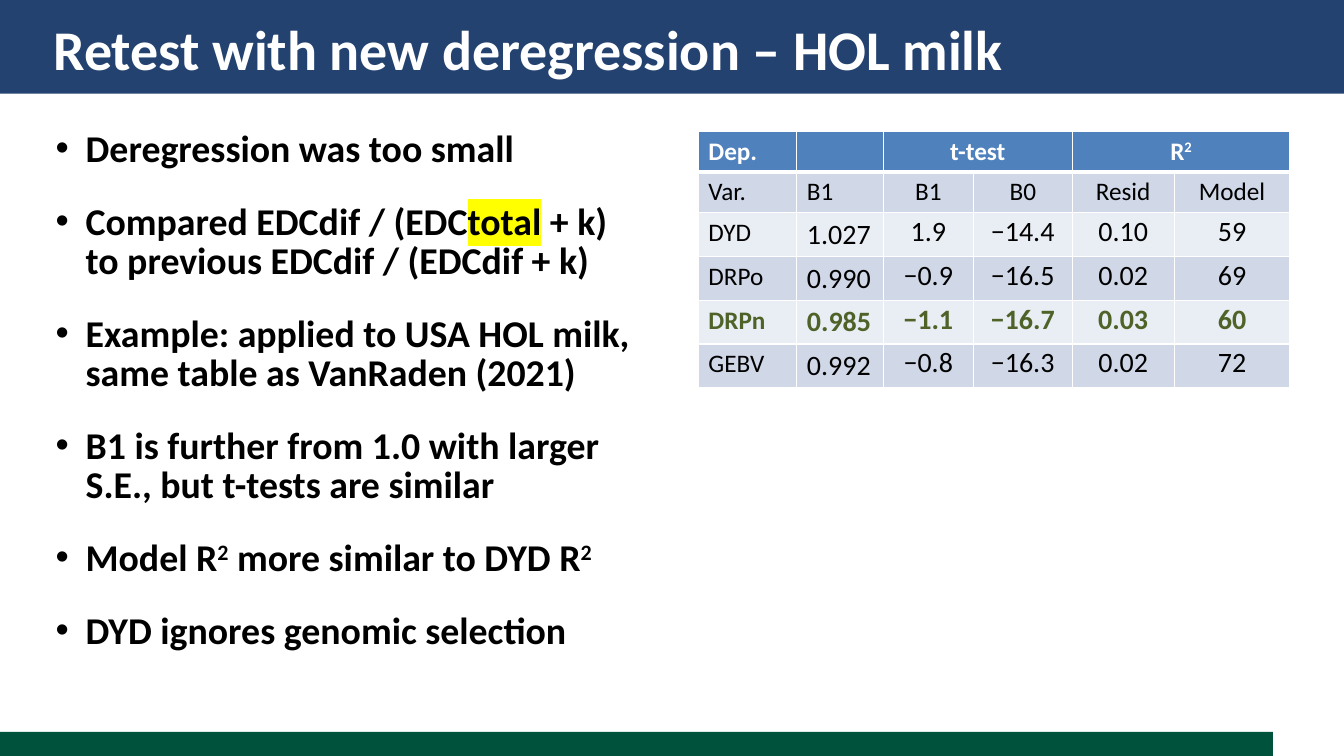
from dataclasses import dataclass

from lxml.etree import SubElement
from pptx import Presentation
from pptx.dml.color import RGBColor as Color
from pptx.enum.shapes import MSO_SHAPE as Shape
from pptx.enum.text import MSO_ANCHOR as Anchor, PP_ALIGN as Align
from pptx.oxml import parse_xml
from pptx.oxml.ns import nsdecls, qn
from pptx.util import Cm, Pt

# Content: a bullet is a list of (text, style) spans
TITLE = "Retest with new deregression – HOL milk"
BULLETS = [
    [("Deregression was too small", "")],
    [("Compared EDCdif / (EDC", ""), ("total", "marked"),
     (" + k) to previous EDCdif / (EDCdif + k)", "")],
    [("Example: applied to USA HOL milk, same table as VanRaden (2021)", "")],
    [("B1 is further from 1.0 with larger S.E., but t-tests are similar", "")],
    [("Model R", ""), ("2", "raised"), (" more similar to DYD R", ""), ("2", "raised")],
    [("DYD ignores genomic selection", "")],
]
HEADER = [[("Dep.", "")], [], [("t-test", "")], [], [("R", ""), ("2", "raised")], []]
RESULTS = [
    ["Var.", "B1", "B1", "B0", "Resid", "Model"],
    ["DYD", "1.027", "1.9", "−14.4", "0.10", "59"],
    ["DRPo", "0.990", "−0.9", "−16.5", "0.02", "69"],
    ["DRPn", "0.985", "−1.1", "−16.7", "0.03", "60"],
    ["GEBV", "0.992", "−0.8", "−16.3", "0.02", "72"],
]
EMPHASIZED = "DRPn"
MERGED_STARTS = (2, 4)


@dataclass(frozen=True)
class Theme:
    font: str = "Calibri"
    white: str = "FFFFFF"
    black: str = "000000"
    navy: str = "244270"
    green: str = "00523C"
    olive: str = "4F6228"
    marker: str = "FFFF00"
    header: str = "4F81BD"
    bands: tuple = ("E9EDF4", "D0D8E8")
    title_size: int = 40
    bullet_size: int = 27
    label_size: int = 18
    value_size: int = 20


theme = Theme()

# Layout
PAGE_WIDTH, PAGE_HEIGHT = Cm(33.87), Cm(19.05)
BANNER_HEIGHT, FOOTER_HEIGHT, FOOTER_WIDTH = Cm(2.36), Cm(0.61), Cm(32.08)
CONTENT_TOP, HALF_WIDTH = Cm(3.3), Cm(14.91)
TABLE_LEFT, ROW_HEIGHT = Cm(17.6), Cm(1.03)
COLUMN_WIDTHS = [Cm(width) for width in (2.48, 2.18, 2.27, 2.49, 2.57, 2.92)]
BULLET_INDENT = Cm(0.76)


def add_bar(page, top, width, height, color):
    bar = page.shapes.add_shape(Shape.RECTANGLE, 0, top, width, height)
    bar.shadow.inherit = False
    bar.fill.solid()
    bar.fill.fore_color.rgb = Color.from_string(color)
    bar.line.fill.background()


def add_text_box(page, left, top, width, height):
    frame = page.shapes.add_textbox(left, top, width, height).text_frame
    frame.word_wrap = True
    clear_margins(frame)
    return frame


def clear_margins(holder):
    holder.margin_left = holder.margin_right = 0
    holder.margin_top = holder.margin_bottom = 0


def write(para, spans, size, color, bold):
    for text, style in spans:
        span = para.add_run()
        span.text = text
        font = span.font
        font.name, font.size, font.bold = theme.font, Pt(size), bold
        font.color.rgb = Color.from_string(color)
        properties = span._r.get_or_add_rPr()
        if style == "raised":
            properties.set("baseline", "30000")
        elif style == "marked":
            properties.find(qn("a:solidFill")).addnext(parse_xml(
                f'<a:highlight {nsdecls("a")}><a:srgbClr val="{theme.marker}"/></a:highlight>'))


def add_bullet(para):
    properties = para._p.get_or_add_pPr()
    properties.set("marL", str(BULLET_INDENT))
    properties.set("indent", str(-BULLET_INDENT))
    SubElement(properties, qn("a:buFont")).set("typeface", "Arial")
    SubElement(properties, qn("a:buChar")).set("char", "•")


def paint_cell(cell, row):
    """Borders first, then the fill, as the cell properties are ordered."""
    widths = {"L": 1, "R": 1, "T": 3 if row == 1 else 1, "B": 3 if row == 0 else 1}
    for side, width in widths.items():
        line = SubElement(cell._tc.get_or_add_tcPr(), qn(f"a:ln{side}"), w=str(Pt(width)))
        SubElement(SubElement(line, qn("a:solidFill")), qn("a:srgbClr")).set("val", theme.white)
    cell.fill.solid()
    cell.fill.fore_color.rgb = Color.from_string(theme.bands[row % 2] if row else theme.header)


def fill_cell(cell, row, column, spans, emphasized):
    paint_cell(cell, row)
    para = cell.text_frame.paragraphs[0]
    para.font.size = Pt(theme.label_size)
    is_value = row > 1 and column > 0
    if column > 1:
        para.alignment = Align.CENTER
        if is_value:
            para.line_spacing = 1.07
            clear_margins(cell)
    color = theme.white if row == 0 else theme.olive if emphasized else theme.black
    size = theme.value_size if is_value else theme.label_size
    write(para, spans, size, color, row == 0 or emphasized)


def add_results(page):
    rows = [HEADER] + [[[(text, "")] for text in row] for row in RESULTS]
    table = page.shapes.add_table(
        len(rows), len(COLUMN_WIDTHS), TABLE_LEFT, CONTENT_TOP,
        sum(COLUMN_WIDTHS), ROW_HEIGHT * len(rows)).table
    table.horz_banding = False
    for column, width in zip(table.columns, COLUMN_WIDTHS):
        column.width = width
    for row, cells in enumerate(rows):
        table.rows[row].height = ROW_HEIGHT
        emphasized = cells[0][0][0] == EMPHASIZED
        for column, spans in enumerate(cells):
            fill_cell(table.cell(row, column), row, column, spans, emphasized)
    for start in MERGED_STARTS:
        table.cell(0, start).merge(table.cell(0, start + 1))


def main():
    deck = Presentation()
    deck.slide_width, deck.slide_height = PAGE_WIDTH, PAGE_HEIGHT
    page = deck.slides.add_slide(deck.slide_layouts[6])

    # Footer and banner
    add_bar(page, PAGE_HEIGHT - FOOTER_HEIGHT, FOOTER_WIDTH, FOOTER_HEIGHT, theme.green)
    add_bar(page, 0, PAGE_WIDTH, BANNER_HEIGHT, theme.navy)

    # Title
    title = add_text_box(page, Cm(1.35), Cm(0.33), Cm(31.17), Cm(1.78))
    title.vertical_anchor = Anchor.MIDDLE
    write(title.paragraphs[0], [(TITLE, "")], theme.title_size, theme.white, True)

    # Results table
    add_results(page)

    # Bullets
    body = add_text_box(page, Cm(1.4), CONTENT_TOP, HALF_WIDTH, Cm(14.22))
    for index, spans in enumerate(BULLETS):
        para = body.add_paragraph() if index else body.paragraphs[0]
        add_bullet(para)
        para.line_spacing, para.space_after = Pt(28), Pt(24)
        write(para, spans, theme.bullet_size, theme.black, True)

    deck.save("out.pptx")


if __name__ == "__main__":
    main()
